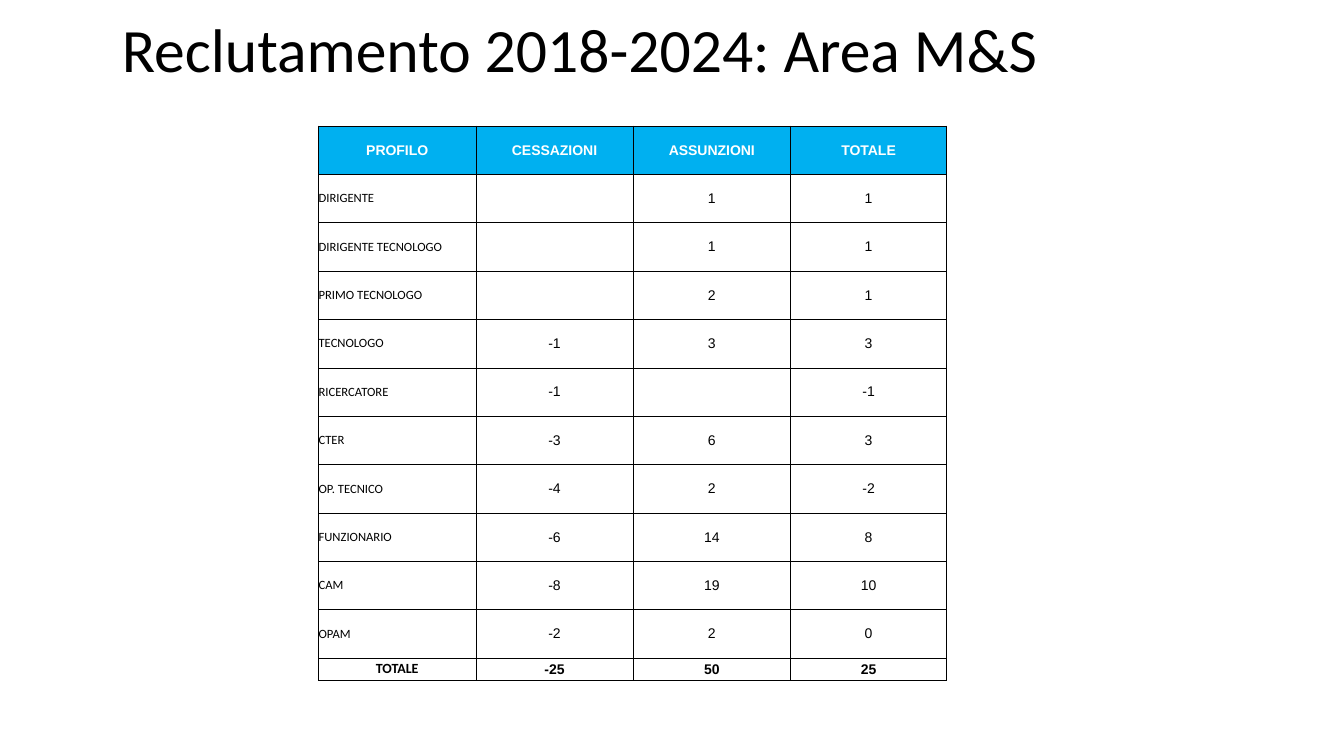
from dataclasses import dataclass

from lxml import etree
from pptx import Presentation
from pptx.dml.color import RGBColor
from pptx.enum.text import MSO_ANCHOR, PP_ALIGN
from pptx.oxml.ns import qn
from pptx.util import Inches, Pt

MIDDLE = MSO_ANCHOR.MIDDLE
LEFT = PP_ALIGN.LEFT
CENTER = PP_ALIGN.CENTER


@dataclass(frozen=True)
class Theme:
    """Colours, fonts and sizes of the slide."""
    black: str = "000000"
    white: str = "FFFFFF"
    header_fill: str = "00B0F0"
    title_font: str = "Calibri"
    number_font: str = "Arial"
    title_size: float = 44
    label_size: float = 9
    number_size: float = 10
    border_width: float = 0.5


THEME = Theme()
TITLE = "Reclutamento 2018-2024: Area M&S"
COLUMN_WIDTHS = [1.56, 1.56, 1.56, 1.55]
ROW_HEIGHT = 0.48
TOTAL_HEIGHT = 0.22
ROWS = [
    ("PROFILO", "CESSAZIONI", "ASSUNZIONI", "TOTALE"),
    ("DIRIGENTE", "", "1", "1"),
    ("DIRIGENTE TECNOLOGO", "", "1", "1"),
    ("PRIMO TECNOLOGO", "", "2", "1"),
    ("TECNOLOGO", "-1", "3", "3"),
    ("RICERCATORE", "-1", "", "-1"),
    ("CTER", "-3", "6", "3"),
    ("OP. TECNICO", "-4", "2", "-2"),
    ("FUNZIONARIO", "-6", "14", "8"),
    ("CAM", "-8", "19", "10"),
    ("OPAM", "-2", "2", "0"),
    ("TOTALE", "-25", "50", "25"),
]


def format_paragraph(paragraph, font_name, size, color, bold=False, align=LEFT):
    """Set alignment and font of a paragraph."""
    paragraph.alignment = align
    font = paragraph.font
    for target in [font] + [run.font for run in paragraph.runs]:
        target.name = font_name
        target.size = Pt(size)
        target.bold = bold
        target.color.rgb = RGBColor.from_string(color)


def add_title(slide):
    """Add the slide heading."""
    box = slide.shapes.add_textbox(Inches(1.11), Inches(-0.2), Inches(11.5), Inches(1.45))
    frame = box.text_frame
    frame.word_wrap = True
    frame.vertical_anchor = MIDDLE
    frame.text = TITLE
    paragraph = frame.paragraphs[0]
    paragraph.line_spacing = 0.9
    format_paragraph(paragraph, THEME.title_font, THEME.title_size, THEME.black)


def add_borders(cell):
    """Draw a thin line on the four sides of a cell."""
    properties = cell._tc.get_or_add_tcPr()
    for side in ("a:lnL", "a:lnR", "a:lnT", "a:lnB"):
        line = etree.SubElement(properties, qn(side), w=str(Pt(THEME.border_width)))
        fill = etree.SubElement(line, qn("a:solidFill"))
        etree.SubElement(fill, qn("a:srgbClr"), val=THEME.black)


def fill_cell(cell, text, is_header, is_total, is_label):
    """Write and style one table cell."""
    cell.margin_left = cell.margin_right = cell.margin_top = cell.margin_bottom = 0
    cell.vertical_anchor = MIDDLE
    add_borders(cell)
    if is_header:
        cell.fill.solid()
        cell.fill.fore_color.rgb = RGBColor.from_string(THEME.header_fill)
    else:
        cell.fill.background()
    cell.text_frame.text = text
    strong = is_header or is_total
    format_paragraph(
        cell.text_frame.paragraphs[0],
        THEME.title_font if is_label and not is_header else THEME.number_font,
        THEME.label_size if is_label and not strong else THEME.number_size,
        THEME.white if is_header else THEME.black,
        bold=strong,
        align=LEFT if is_label and not strong else CENTER,
    )


def add_recruitment_table(slide):
    """Add the table of departures and hires by profile."""
    last = len(ROWS) - 1
    frame = slide.shapes.add_table(
        len(ROWS), len(COLUMN_WIDTHS), Inches(3.16), Inches(1.25),
        Inches(sum(COLUMN_WIDTHS)), Inches(ROW_HEIGHT * last + TOTAL_HEIGHT))
    table = frame.table
    for column, width in zip(table.columns, COLUMN_WIDTHS):
        column.width = Inches(width)
    for row_index, values in enumerate(ROWS):
        is_total = row_index == last
        table.rows[row_index].height = Inches(TOTAL_HEIGHT if is_total else ROW_HEIGHT)
        for column_index, text in enumerate(values):
            fill_cell(table.cell(row_index, column_index), text,
                      row_index == 0, is_total, column_index == 0)


def main():
    """Build and save the presentation."""
    presentation = Presentation()
    presentation.slide_width = Inches(13.33)
    presentation.slide_height = Inches(7.5)
    slide = presentation.slides.add_slide(presentation.slide_layouts[6])
    add_title(slide)
    add_recruitment_table(slide)
    presentation.save("out.pptx")


if __name__ == "__main__":
    main()
